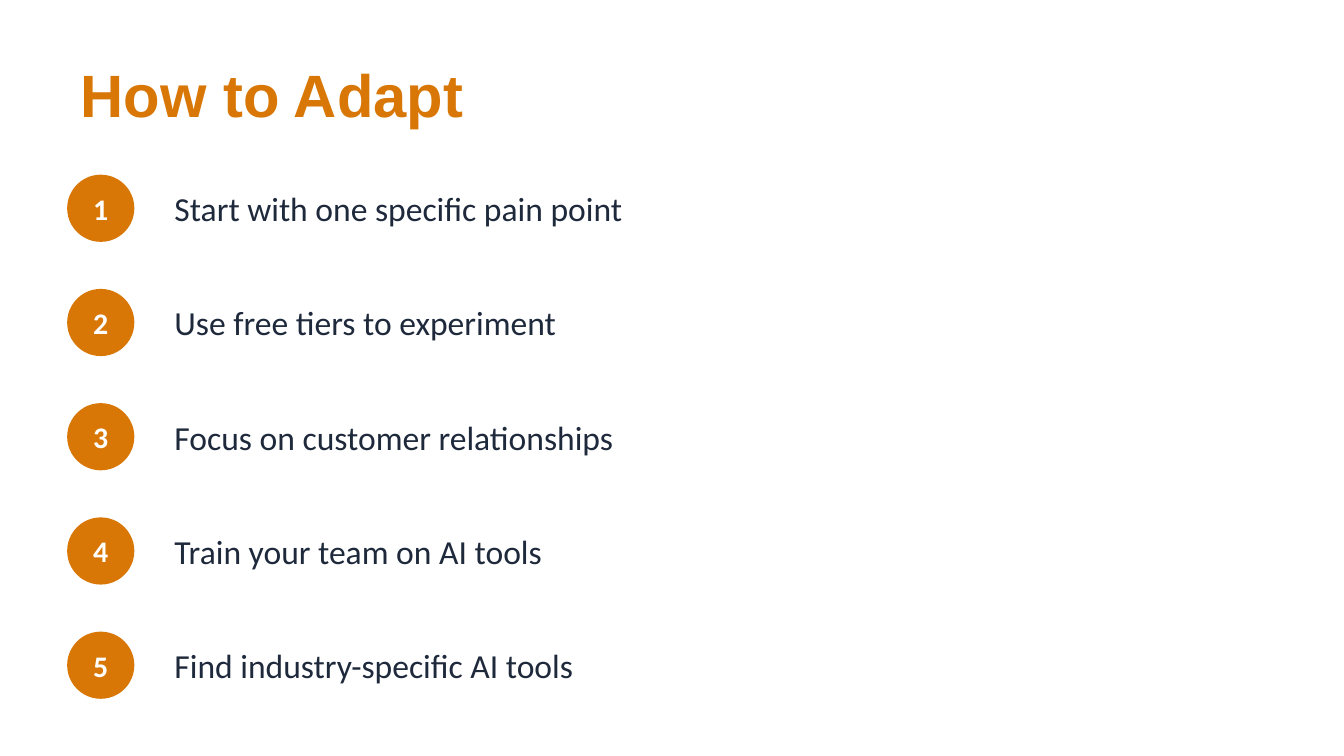
import pptx
import pptx.util
import pptx.dml.color
import pptx.enum.shapes
import pptx.enum.text

COLORS = {"accent": "D97706", "body": "1E293B", "number": "FFFFFF"}
STEPS = [
    "Start with one specific pain point",
    "Use free tiers to experiment",
    "Focus on customer relationships",
    "Train your team on AI tools",
    "Find industry-specific AI tools",
]

# Widescreen 16:9 slide
presentation = pptx.Presentation()
presentation.slide_width = pptx.util.Inches(10)
presentation.slide_height = presentation.slide_width * 9 // 16

# Grid: side margins, one row per step
MARGIN = pptx.util.Inches(0.5)
CONTENT_WIDTH = presentation.slide_width - 2 * MARGIN
FIRST_ROW = pptx.util.Inches(1.3)
ROW_PITCH = pptx.util.Inches(0.85)
CIRCLE = pptx.util.Inches(0.5)
TEXT_OFFSET = pptx.util.Inches(0.7)


def color(name):
    return pptx.dml.color.RGBColor.from_string(COLORS[name])


def write(shape, text, font_name, size, color_name, bold=False, centered=False):
    frame = shape.text_frame
    frame.word_wrap = True
    frame.vertical_anchor = pptx.enum.text.MSO_ANCHOR.MIDDLE
    frame.text = text
    paragraph = frame.paragraphs[0]
    alignment = pptx.enum.text.PP_ALIGN
    paragraph.alignment = alignment.CENTER if centered else alignment.LEFT
    paragraph.font.name = font_name
    paragraph.font.size = pptx.util.Pt(size)
    paragraph.font.bold = bold
    paragraph.font.color.rgb = color(color_name)


# Title
slide = presentation.slides.add_slide(presentation.slide_layouts.get_by_name("Title Only"))
title = slide.shapes.title
title.left, title.top = MARGIN, pptx.util.Inches(0.4)
title.width, title.height = CONTENT_WIDTH, pptx.util.Inches(0.6)
write(title, "How to Adapt", "Arial", 32, "accent", bold=True)
title.text_frame.auto_size = pptx.enum.text.MSO_AUTO_SIZE.NONE

# Numbered steps
for index, step in enumerate(STEPS):
    top = FIRST_ROW + index * ROW_PITCH

    circle = slide.shapes.add_shape(
        pptx.enum.shapes.MSO_SHAPE.OVAL, MARGIN, top, CIRCLE, CIRCLE)
    circle.shadow.inherit = False
    circle.fill.solid()
    circle.fill.fore_color.rgb = color("accent")
    circle.line.fill.background()
    circle.text_frame.margin_left = circle.text_frame.margin_right = 0
    circle.text_frame.margin_top = circle.text_frame.margin_bottom = 0
    write(circle, str(index + 1), "Calibri", 16, "number", bold=True, centered=True)

    label = slide.shapes.add_textbox(
        MARGIN + TEXT_OFFSET, top, CONTENT_WIDTH - TEXT_OFFSET, CIRCLE)
    write(label, step, "Calibri", 18, "body")

presentation.save("out.pptx")
